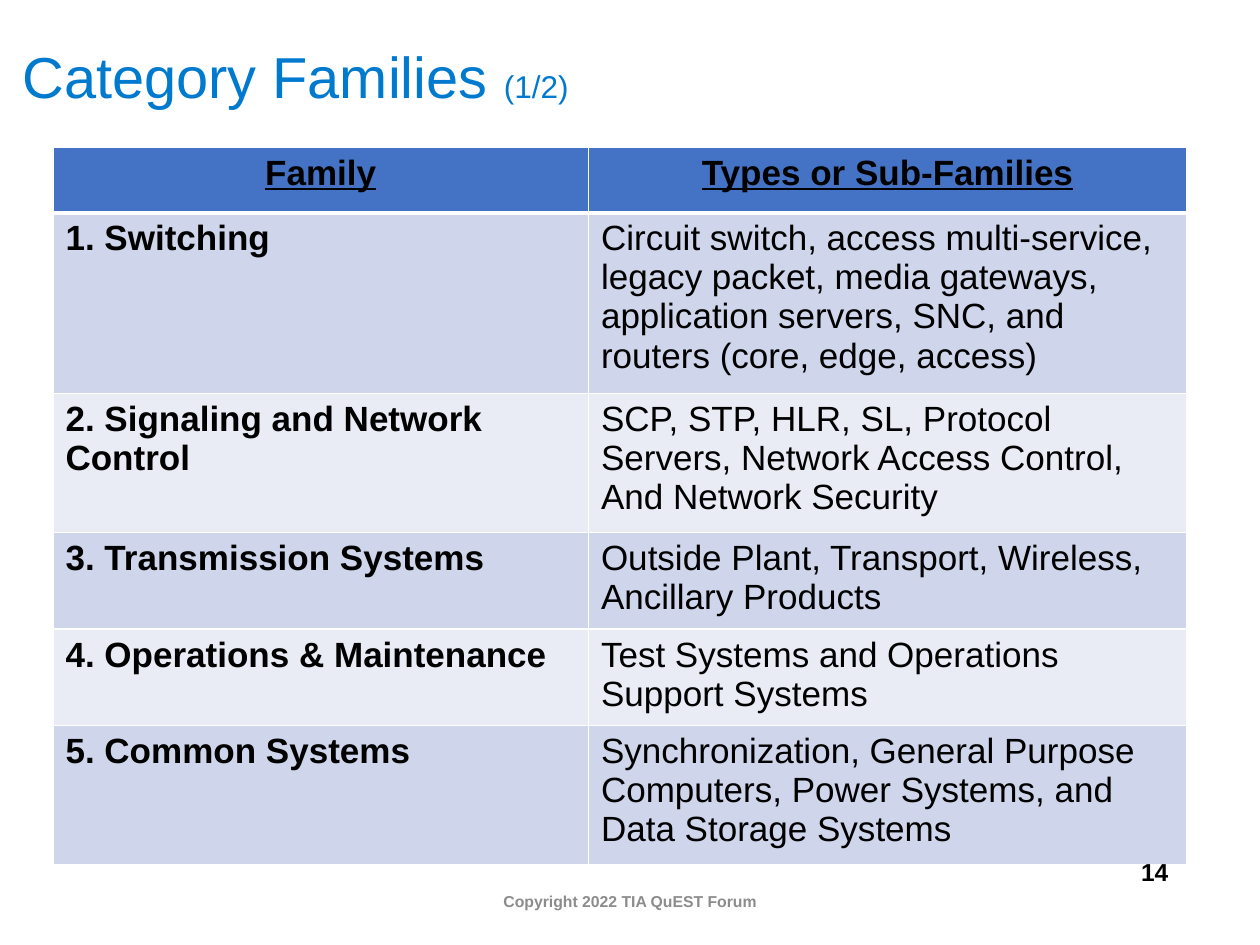
import pptx
import pptx.util
import pptx.dml.color
import pptx.enum.text
import pptx.oxml.ns
import lxml.etree

Inches = pptx.util.Inches
Pt = pptx.util.Pt
RGBColor = pptx.dml.color.RGBColor
ALIGN = pptx.enum.text.PP_ALIGN
ANCHOR = pptx.enum.text.MSO_ANCHOR

TITLE_BLUE = RGBColor(0x00, 0x7A, 0xCF)
HEADER_BLUE = RGBColor(0x44, 0x72, 0xC4)
BAND_DARK = RGBColor(0xCF, 0xD5, 0xEA)
BAND_LIGHT = RGBColor(0xE9, 0xEB, 0xF5)
FOOTER_GRAY = RGBColor(0x8C, 0x8C, 0x8C)
BLACK = RGBColor(0, 0, 0)
WHITE = RGBColor(0xFF, 0xFF, 0xFF)

HEADINGS = ("Family", "Types or Sub-Families")
# Family, its types, row height in inches
FAMILIES = [
    ("1. Switching",
     "Circuit switch, access multi-service, legacy packet, media gateways, "
     "application servers, SNC, and routers (core, edge, access)", 1.34),
    ("2. Signaling and Network Control",
     "SCP, STP, HLR, SL, Protocol Servers, Network Access Control, "
     "And Network Security", 1.03),
    ("3. Transmission Systems",
     "Outside Plant, Transport, Wireless, Ancillary Products", 0.72),
    ("4. Operations & Maintenance",
     "Test Systems and Operations Support Systems", 0.72),
    ("5. Common Systems",
     "Synchronization, General Purpose Computers, Power Systems, and "
     "Data Storage Systems", 1.03),
]


def add_span(para, text, size, color, bold=False, underline=False):
    span = para.add_run()
    span.text = text
    span.font.name = "Arial"
    span.font.size = Pt(size)
    span.font.bold = bold
    span.font.underline = underline
    span.font.color.rgb = color


def add_text(page, left, top, width, height, anchor, align):
    """Add an empty text box and return its first paragraph."""
    box = page.shapes.add_textbox(
        Inches(left), Inches(top), Inches(width), Inches(height))
    frame = box.text_frame
    frame.word_wrap = True
    frame.vertical_anchor = anchor
    para = frame.paragraphs[0]
    para.alignment = align
    return para


def add_title(page, left, top, width, height):
    para = add_text(page, left, top, width, height, ANCHOR.MIDDLE, ALIGN.LEFT)
    para.line_spacing = 0.9
    add_span(para, "Category Families ", 33, TITLE_BLUE)
    add_span(para, "(1/2)", 18, TITLE_BLUE)


def set_borders(cell, color, widths):
    properties = cell._tc.get_or_add_tcPr()
    qn = pptx.oxml.ns.qn
    for side, width in zip("LRTB", widths):
        line = lxml.etree.SubElement(
            properties, qn(f"a:ln{side}"), w=str(Pt(width)))
        fill = lxml.etree.SubElement(line, qn("a:solidFill"))
        lxml.etree.SubElement(fill, qn("a:srgbClr"), val=str(color))


def fill_cell(cell, text, fill, widths, align, bold, underline):
    set_borders(cell, WHITE, widths)
    cell.fill.solid()
    cell.fill.fore_color.rgb = fill
    para = cell.text_frame.paragraphs[0]
    para.alignment = align
    add_span(para, text, 20, BLACK, bold, underline)


def add_family_table(page, left, top, column_widths, header_height):
    heights = [header_height] + [height for _, _, height in FAMILIES]
    table = page.shapes.add_table(
        len(heights), len(column_widths), Inches(left), Inches(top),
        Inches(sum(column_widths)), Inches(sum(heights))).table
    for column, width in zip(table.columns, column_widths):
        column.width = Inches(width)
    for row, height in zip(table.rows, heights):
        row.height = Inches(height)

    # Header row, with a thicker rule below
    for column, heading in enumerate(HEADINGS):
        fill_cell(table.cell(0, column), heading, HEADER_BLUE,
                  (1, 1, 1, 3), ALIGN.CENTER, True, True)

    # Banded body rows
    for row, (family, types, _) in enumerate(FAMILIES, start=1):
        band = BAND_DARK if row % 2 else BAND_LIGHT
        widths = (1, 1, 3 if row == 1 else 1, 1)
        for column, text in enumerate((family, types)):
            fill_cell(table.cell(row, column), text, band, widths,
                      ALIGN.LEFT, column == 0, False)


def add_copyright(page, left, top, width, height):
    para = add_text(page, left, top, width, height, ANCHOR.MIDDLE, ALIGN.CENTER)
    add_span(para, "Copyright 2022 TIA QuEST Forum", 9, FOOTER_GRAY, True)


def add_page_number(page, left, top, width, height):
    para = add_text(page, left, top, width, height, ANCHOR.TOP, ALIGN.CENTER)
    add_span(para, "14", 14, BLACK, True)


def main():
    deck = pptx.Presentation()
    deck.slide_width = Inches(10)
    deck.slide_height = Inches(7.5)
    page = deck.slides.add_slide(deck.slide_layouts[6])
    add_title(page, 0.08, 0.17, 9.58, 0.92)
    add_family_table(page, 0.42, 1.17, (4.25, 4.75), 0.52)
    add_copyright(page, 3.31, 6.95, 3.38, 0.4)
    add_page_number(page, 8.33, 6.75, 1.67, 0.34)
    deck.save("out.pptx")


if __name__ == "__main__":
    main()
